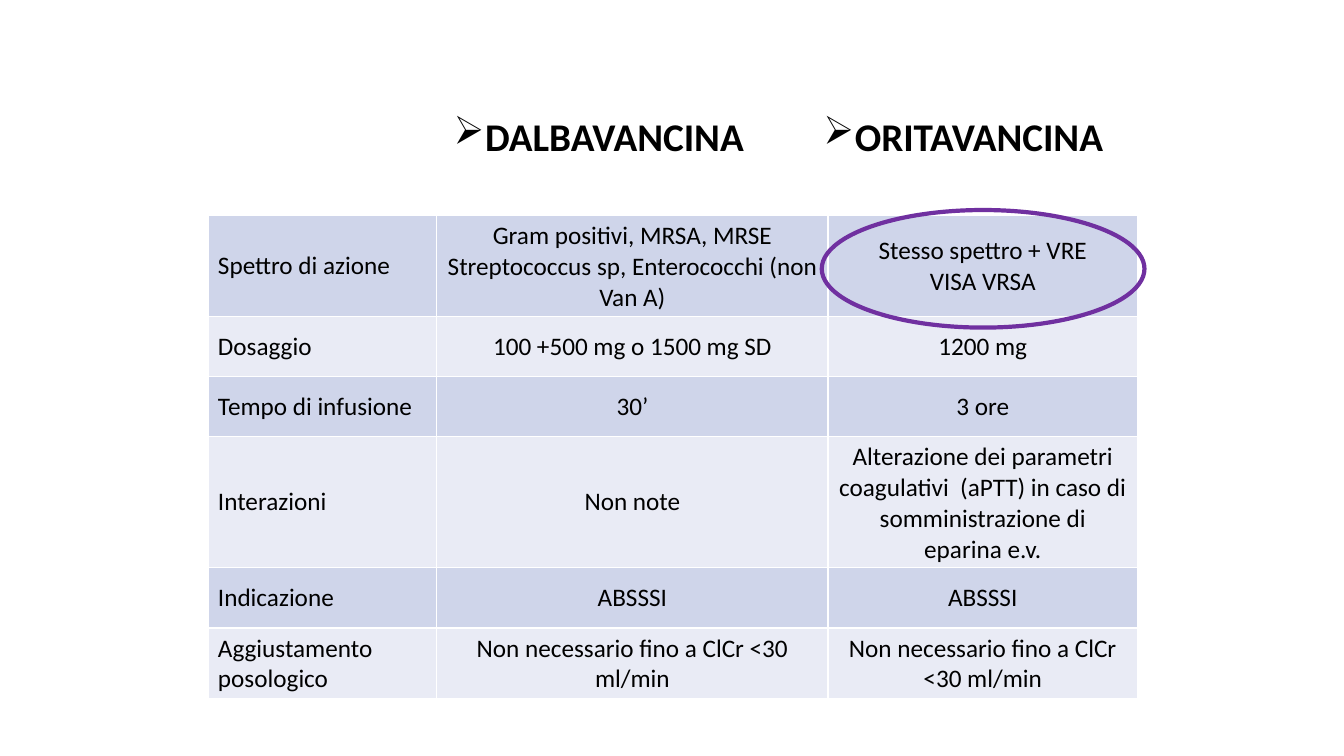
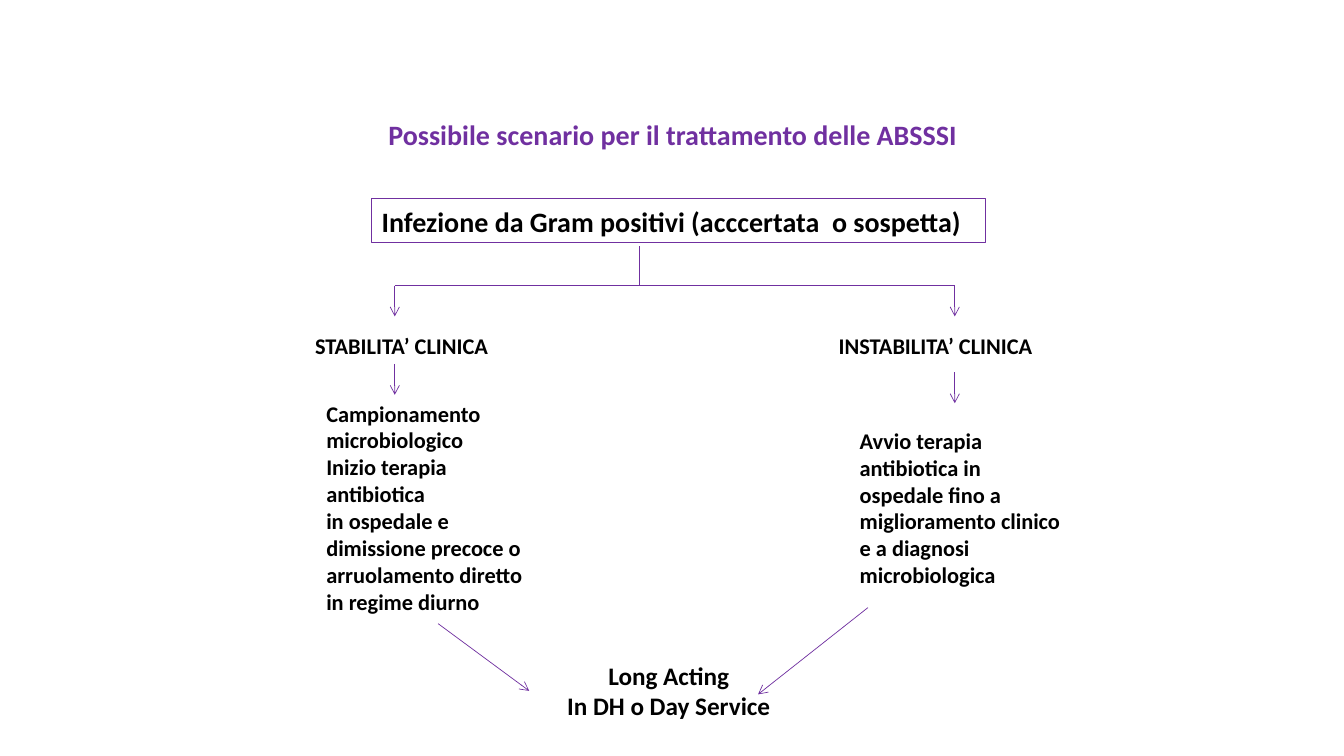
from dataclasses import dataclass
from typing import Optional

from lxml.etree import SubElement
from pptx import Presentation
from pptx.dml.color import RGBColor
from pptx.enum.shapes import MSO_CONNECTOR, MSO_SHAPE
from pptx.enum.text import MSO_ANCHOR, MSO_AUTO_SIZE, PP_ALIGN
from pptx.oxml.ns import qn
from pptx.presentation import Presentation as Deck
from pptx.shapes.autoshape import Shape
from pptx.shapes.connector import Connector
from pptx.slide import Slide
from pptx.table import _Cell as Cell
from pptx.text.text import TextFrame
from pptx.util import Pt

FONT = "Calibri"
BLACK = "000000"
WHITE = "FFFFFF"
PURPLE = "7030A0"
BAND_FILLS = ("CFD5EA", "E9EBF5")

TITLE_ONLY_LAYOUT = 5
BLANK_LAYOUT = 6

TABLE_LEFT, TABLE_TOP = 148.5, 154
COLUMN_WIDTHS = (163.5, 279.5, 221)
ROW_HEIGHTS = (71.5, 43, 43, 93.5, 43, 50)
TABLE_ROWS = (
    (
        "Spettro di azione",
        "Gram positivi, MRSA, MRSE Streptococcus sp, Enterococchi (non Van A)",
        "Stesso spettro + VRE\nVISA VRSA",
    ),
    ("Dosaggio", "100 +500 mg o 1500 mg SD", "1200 mg"),
    ("Tempo di infusione", "30’", "3 ore"),
    (
        "Interazioni",
        "Non note",
        "Alterazione dei parametri coagulativi  (aPTT) in caso di "
        "somministrazione di eparina e.v.",
    ),
    ("Indicazione", "ABSSSI", "ABSSSI"),
    (
        "Aggiustamento posologico",
        "Non necessario fino a ClCr <30 ml/min",
        "Non necessario fino a ClCr <30 ml/min",
    ),
)

LEFT_BRANCH, RIGHT_BRANCH, TRUNK = 282, 682, 457
BUS_TOP = 204
ARROW_LENGTH = 22


@dataclass(frozen=True)
class TextBox:
    """A text box, placed in points."""

    text: str
    left: float
    top: float
    width: float
    height: float
    size: float = 16
    align: PP_ALIGN = PP_ALIGN.LEFT
    bullet: Optional[str] = None


@dataclass(frozen=True)
class Line:
    """A straight line in points, with or without an arrowhead."""

    start_x: float
    start_y: float
    end_x: float
    end_y: float
    arrow: bool = True


DRUG_HEADINGS = tuple(
    TextBox(name, left, 76.5, 253.5, 41, size=28, bullet="➢")
    for name, left in (("DALBAVANCINA", 317), ("ORITAVANCINA", 581))
)

CLINICAL_STEPS = (
    TextBox("STABILITA’ CLINICA", 218, 233.5, 171.5, 26.5),
    TextBox("INSTABILITA’ CLINICA", 592, 233.5, 178, 26.5),
    TextBox(
        "Campionamento microbiologico\nInizio terapia antibiotica\n"
        "in ospedale e dimissione precoce o arruolamento diretto in regime diurno",
        226, 282, 163.5, 163,
    ),
    TextBox(
        "Avvio terapia antibiotica in ospedale fino a miglioramento clinico "
        "e a diagnosi microbiologica",
        607, 301.5, 160.5, 124,
    ),
)
OUTCOME = TextBox(
    "Long Acting\nIn DH o Day Service", 378, 468, 199.5, 51, 18, PP_ALIGN.CENTER
)

FLOW_LINES = (
    Line(TRUNK, BUS_TOP, TRUNK, 175.5, arrow=False),
    Line(LEFT_BRANCH, BUS_TOP, RIGHT_BRANCH, BUS_TOP, arrow=False),
    *(
        Line(x, top, x, top + ARROW_LENGTH)
        for x, top in (
            (LEFT_BRANCH, BUS_TOP),
            (RIGHT_BRANCH, BUS_TOP),
            (LEFT_BRANCH, 260),
            (RIGHT_BRANCH, 266),
        )
    ),
    Line(620, 434, 541.5, 496),
)
STABLE_TO_OUTCOME = Line(313, 445.5, 378, 493.5)


def color(value: str) -> RGBColor:
    """Turn a hex string into a colour."""
    return RGBColor.from_string(value)


def write_text(
    frame: TextFrame,
    text: str,
    size: float,
    align: PP_ALIGN = PP_ALIGN.LEFT,
    bold: bool = True,
    font_color: str = BLACK,
    bullet: Optional[str] = None,
) -> None:
    """Fill a frame with one formatted paragraph per line of text."""
    frame.text = text
    frame.word_wrap = True
    for paragraph in frame.paragraphs:
        paragraph.alignment = align
        if bullet:
            properties = paragraph._p.get_or_add_pPr()
            properties.set("marL", str(Pt(22.5)))
            properties.set("indent", str(-Pt(22.5)))
            SubElement(properties, qn("a:buChar"), char=bullet)
        paragraph.font.name = FONT
        paragraph.font.size = Pt(size)
        paragraph.font.bold = bold
        paragraph.font.color.rgb = color(font_color)


def add_text_box(slide: Slide, box: TextBox) -> Shape:
    """Draw a text box that grows with its text."""
    shape = slide.shapes.add_textbox(
        Pt(box.left), Pt(box.top), Pt(box.width), Pt(box.height)
    )
    write_text(shape.text_frame, box.text, box.size, box.align, bullet=box.bullet)
    shape.text_frame.auto_size = MSO_AUTO_SIZE.SHAPE_TO_FIT_TEXT
    return shape


def add_outline(
    slide: Slide,
    kind: MSO_SHAPE,
    left: float,
    top: float,
    width: float,
    height: float,
    weight: float,
) -> Shape:
    """Draw an unfilled purple shape."""
    shape = slide.shapes.add_shape(kind, Pt(left), Pt(top), Pt(width), Pt(height))
    shape.shadow.inherit = False
    shape.fill.background()
    shape.line.color.rgb = color(PURPLE)
    shape.line.width = Pt(weight)
    return shape


def add_line(slide: Slide, line: Line) -> Connector:
    """Draw a thin purple connector."""
    connector = slide.shapes.add_connector(
        MSO_CONNECTOR.STRAIGHT,
        Pt(line.start_x),
        Pt(line.start_y),
        Pt(line.end_x),
        Pt(line.end_y),
    )
    connector.line.color.rgb = color(PURPLE)
    connector.line.width = Pt(0.5)
    if line.arrow:
        SubElement(connector.line._get_or_add_ln(), qn("a:tailEnd"), type="arrow")
    SubElement(connector._element.spPr, qn("a:effectLst"))
    return connector


def add_borders(cell: Cell) -> None:
    """Give a cell white borders on all sides."""
    properties = cell._tc.get_or_add_tcPr()
    for side in ("a:lnL", "a:lnR", "a:lnT", "a:lnB"):
        border = SubElement(properties, qn(side), w=str(Pt(1)))
        fill = SubElement(border, qn("a:solidFill"))
        SubElement(fill, qn("a:srgbClr"), val=WHITE)


def add_comparison_table(slide: Slide) -> None:
    """Draw the table that compares the two drugs."""
    table = slide.shapes.add_table(
        len(ROW_HEIGHTS),
        len(COLUMN_WIDTHS),
        Pt(TABLE_LEFT),
        Pt(TABLE_TOP),
        Pt(sum(COLUMN_WIDTHS)),
        Pt(sum(ROW_HEIGHTS)),
    ).table
    table.first_row = False
    table.horz_banding = False
    for column, width in zip(table.columns, COLUMN_WIDTHS):
        column.width = Pt(width)
    for row_index, (row, height) in enumerate(zip(table.rows, ROW_HEIGHTS)):
        row.height = Pt(height)
        for column_index, cell in enumerate(row.cells):
            align = PP_ALIGN.CENTER if column_index else PP_ALIGN.LEFT
            text = TABLE_ROWS[row_index][column_index]
            write_text(cell.text_frame, text, 18, align, bold=False)
            cell.vertical_anchor = MSO_ANCHOR.MIDDLE
            add_borders(cell)
            cell.fill.solid()
            cell.fill.fore_color.rgb = color(BAND_FILLS[row_index % 2])


def build_comparison(presentation: Deck) -> None:
    """Build the slide that compares dalbavancina and oritavancina."""
    slide = presentation.slides.add_slide(presentation.slide_layouts[BLANK_LAYOUT])
    for heading in DRUG_HEADINGS:
        add_text_box(slide, heading)
    add_comparison_table(slide)
    add_outline(slide, MSO_SHAPE.OVAL, 587, 150, 230.5, 84, 3)


def build_scenario(presentation: Deck) -> None:
    """Build the treatment flow slide."""
    slide = presentation.slides.add_slide(
        presentation.slide_layouts[TITLE_ONLY_LAYOUT]
    )
    title = slide.shapes.title
    title.left, title.top, title.width, title.height = (
        Pt(150), Pt(80), Pt(661), Pt(31.5),
    )
    write_text(
        title.text_frame,
        "Possibile scenario per il trattamento delle ABSSSI",
        20,
        PP_ALIGN.CENTER,
        font_color=PURPLE,
    )
    title.text_frame.auto_size = MSO_AUTO_SIZE.NONE

    infection = add_outline(slide, MSO_SHAPE.RECTANGLE, 265.5, 142, 438.5, 31.5, 0.75)
    write_text(
        infection.text_frame, "Infezione da Gram positivi (acccertata  o sospetta)", 20
    )
    for step in CLINICAL_STEPS:
        add_text_box(slide, step)
    outcome = add_text_box(slide, OUTCOME)
    for line in FLOW_LINES:
        add_line(slide, line)
    add_line(slide, STABLE_TO_OUTCOME).end_connect(outcome, 1)


def main() -> None:
    """Build and save the presentation."""
    presentation = Presentation()
    presentation.slide_width = Pt(960)
    presentation.slide_height = Pt(540)
    build_comparison(presentation)
    build_scenario(presentation)
    presentation.save("out.pptx")


if __name__ == "__main__":
    main()
